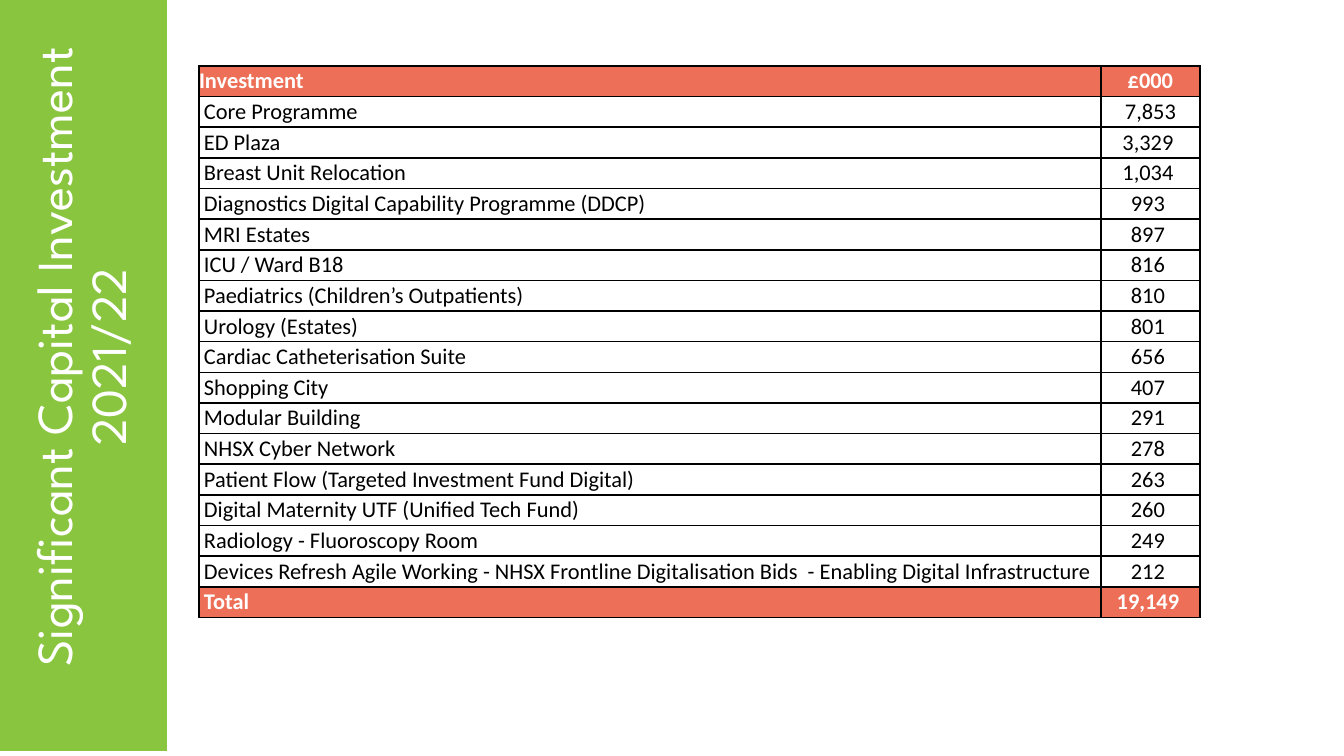
from dataclasses import dataclass

from lxml import etree
from pptx import Presentation
from pptx import util as u
from pptx.dml.color import RGBColor
from pptx.enum import shapes, text
from pptx.oxml import ns

SCALE = 914400 / 134.4


@dataclass(frozen=True)
class Theme:
    """Colours, fonts and type sizes of the deck."""
    green: str = "89C53F"
    coral: str = "ED6F57"
    white: str = "FFFFFF"
    black: str = "000000"
    title_font: str = "League Spartan"
    table_font: str = "Calibri"
    title_size: int = 27
    table_size: int = 12
    border: int = 1


THEME = Theme()

TITLE = "Significant Capital Investment 2021/22"
HEADER = ("Investment", "£000")
INVESTMENTS = [
    ("Core Programme", "7,853"),
    ("ED Plaza", "3,329"),
    ("Breast Unit Relocation", "1,034"),
    ("Diagnostics Digital Capability Programme (DDCP)", "993"),
    ("MRI Estates", "897"),
    ("ICU / Ward B18", "816"),
    ("Paediatrics (Children’s Outpatients)", "810"),
    ("Urology (Estates)", "801"),
    ("Cardiac Catheterisation Suite", "656"),
    ("Shopping City", "407"),
    ("Modular Building", "291"),
    ("NHSX Cyber Network", "278"),
    ("Patient Flow (Targeted Investment Fund Digital)", "263"),
    ("Digital Maternity UTF (Unified Tech Fund)", "260"),
    ("Radiology - Fluoroscopy Room", "249"),
    ("Devices Refresh Agile Working - NHSX Frontline Digitalisation Bids"
     "  - Enabling Digital Infrastructure", "212"),
]
TOTAL = ("Total", "19,149")


def px(length):
    """Turn pixels into EMU."""
    return u.Emu(round(length * SCALE))


def add_span(para, words, font, size, colour, bold=False):
    """Add one styled run to a paragraph."""
    span = para.add_run()
    span.text = words
    span.font.name = font
    span.font.size = u.Pt(size)
    span.font.bold = bold
    span.font.color.rgb = RGBColor.from_string(colour)


def add_sidebar(page, left, top, width, height):
    """Draw the green band with the title turned to read upwards."""
    band = page.shapes.add_shape(
        shapes.MSO_SHAPE.RECTANGLE, px(left), px(top), px(width), px(height))
    band.shadow.inherit = False
    band.fill.solid()
    band.fill.fore_color.rgb = RGBColor.from_string(THEME.green)
    band.line.fill.background()

    long_side, short_side = 655, 146
    centre_x, centre_y = left + 83, top + 361
    box = page.shapes.add_textbox(
        px(centre_x - long_side / 2), px(centre_y - short_side / 2),
        px(long_side), px(short_side))
    box.rotation = 270
    frame = box.text_frame
    frame.word_wrap = True
    frame.vertical_anchor = text.MSO_ANCHOR.MIDDLE
    frame.margin_left = frame.margin_right = px(10)
    frame.margin_top = frame.margin_bottom = px(5)
    para = frame.paragraphs[0]
    para.alignment = text.PP_ALIGN.CENTER
    para.line_spacing = 0.9
    add_span(para, TITLE, THEME.title_font, THEME.title_size, THEME.white)


def add_borders(cell):
    """Give a cell thin lines on all four sides, ahead of its fill."""
    properties = cell._tc.get_or_add_tcPr()
    for index, side in enumerate(("lnL", "lnR", "lnT", "lnB")):
        line = etree.Element(ns.qn(f"a:{side}"), w=str(u.Pt(THEME.border)))
        fill = etree.SubElement(line, ns.qn("a:solidFill"))
        etree.SubElement(fill, ns.qn("a:srgbClr"), val=THEME.black)
        properties.insert(index, line)


def fill_cell(cell, words, strong, align, indent_left, indent_right):
    """Write and style one table cell."""
    cell.margin_top = cell.margin_bottom = 0
    cell.margin_left, cell.margin_right = px(indent_left), px(indent_right)
    cell.vertical_anchor = text.MSO_ANCHOR.MIDDLE
    if strong:
        cell.fill.solid()
        cell.fill.fore_color.rgb = RGBColor.from_string(THEME.coral)
    else:
        cell.fill.background()
    add_borders(cell)
    para = cell.text_frame.paragraphs[0]
    para.alignment = align
    add_span(para, words, THEME.table_font, THEME.table_size,
             THEME.white if strong else THEME.black, strong)


def add_investment_table(page, left, top, width, height):
    """Place the investments between a header row and a total row."""
    rows = [HEADER, *INVESTMENTS, TOTAL]
    amount_width, indent = 99, 5
    table = page.shapes.add_table(
        len(rows), 2, px(left), px(top), px(width), px(height)).table
    table.horz_banding = False
    table.columns[0].width = px(width - amount_width)
    table.columns[1].width = px(amount_width)
    for index, (name, amount) in enumerate(rows):
        table.rows[index].height = px(height / len(rows))
        strong = index in (0, len(rows) - 1)
        name_indent = indent if index > 0 else 0
        amount_indent = indent if index > 1 else 0
        fill_cell(table.cell(index, 0), name, strong,
                  text.PP_ALIGN.LEFT, name_indent, 0)
        fill_cell(table.cell(index, 1), amount, strong,
                  text.PP_ALIGN.CENTER, 0, amount_indent)


def main():
    """Build the deck and save it."""
    deck = Presentation()
    deck.slide_width, deck.slide_height = px(1344), px(756)
    page = deck.slides.add_slide(deck.slide_layouts[6])
    add_sidebar(page, 0, -4, 167, 755)
    add_investment_table(page, 199, 66, 1001, 552)
    deck.save("out.pptx")


if __name__ == "__main__":
    main()
